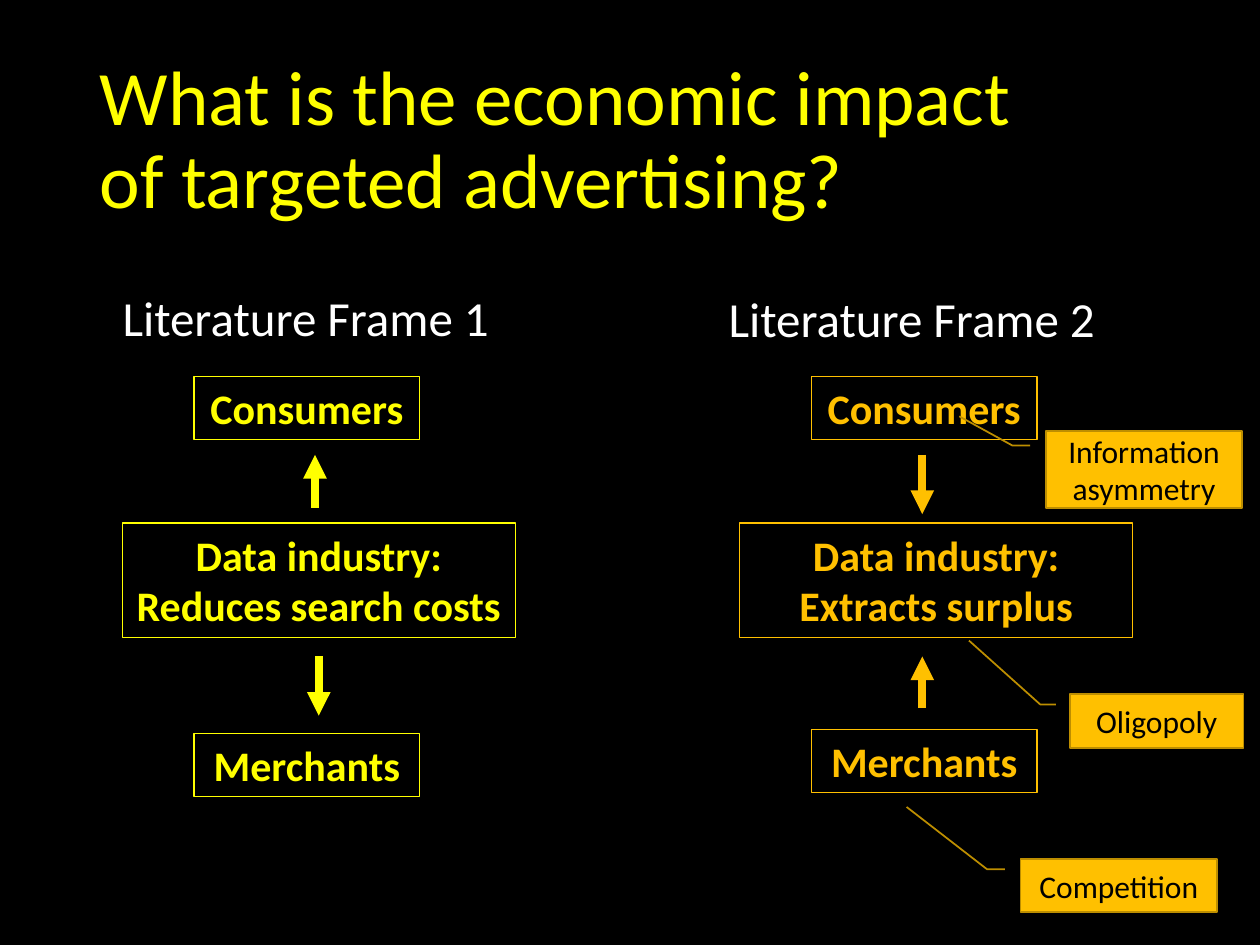
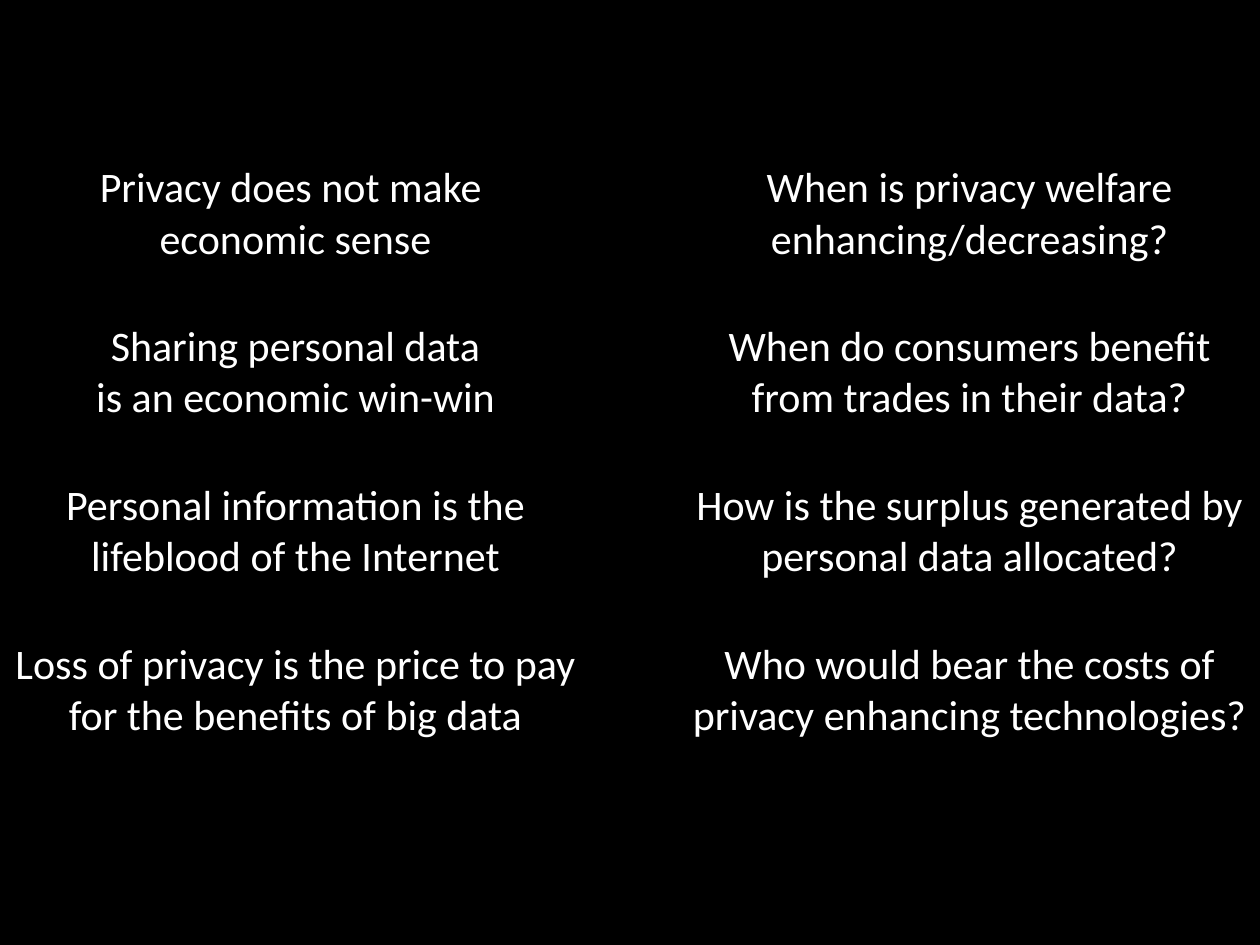
from dataclasses import dataclass

from lxml import etree
from pptx import Presentation
from pptx.dml.color import RGBColor
from pptx.enum import shapes, text
from pptx.oxml.ns import qn
from pptx.util import Inches, Pt


@dataclass(frozen=True)
class Theme:
    font: str = "Calibri"
    back: RGBColor = RGBColor(0, 0, 0)
    white: RGBColor = RGBColor(255, 255, 255)
    yellow: RGBColor = RGBColor(255, 255, 0)
    amber: RGBColor = RGBColor(255, 192, 0)
    amber_dark: RGBColor = RGBColor(0xBD, 0x8E, 0)
    title: Pt = Pt(44)
    heading: Pt = Pt(28)
    body: Pt = Pt(24)
    callout: Pt = Pt(18)


th = Theme()
NO_STYLE = "{2D5ABB26-0587-4C30-8999-92F81FD0307C}"  # table style without fill or grid


def write(tf, words, size, color, bold=False, para=None, **frame):
    """Fill a text frame: \\n starts a paragraph, \\v breaks a line."""
    for name, value in frame.items():
        setattr(tf, name, value)
    tf.text = words
    for p in tf.paragraphs:
        for name, value in {"alignment": text.PP_ALIGN.CENTER, **(para or {})}.items():
            setattr(p, name, value)
        for r in p.runs:
            for name, value in {"name": th.font, "size": size, "bold": bold}.items():
                setattr(r.font, name, value)
            r.font.color.rgb = color


def add_box(s, kind, at, line, width, fill=None):
    """Add a flat preset shape with an outline and an optional fill."""
    sp = s.shapes.add_shape(kind, *map(Inches, at))
    sp.shadow.inherit = False
    sp.line.color.rgb = line
    sp.line.width = Pt(width)
    if fill is None:
        sp.fill.background()
    else:
        sp.fill.solid()
        sp.fill.fore_color.rgb = fill
    return sp


prs = Presentation()
prs.slide_width, prs.slide_height = Inches(10), Inches(7.5)
frames_slide = prs.slides.add_slide(prs.slide_layouts[5])
claims_slide = prs.slides.add_slide(prs.slide_layouts[6])
for s in prs.slides:
    s.background.fill.solid()
    s.background.fill.fore_color.rgb = th.back

# Slide 1: title
s = frames_slide
sp = s.shapes.title
sp.left, sp.top, sp.width, sp.height = map(Inches, (0.69, 0.4, 8.62, 1.45))
write(sp.text_frame, "What is the economic impact \vof targeted advertising?",
      th.title, th.yellow, vertical_anchor=text.MSO_ANCHOR.MIDDLE, word_wrap=True,
      para={"alignment": text.PP_ALIGN.LEFT, "line_spacing": 0.9})

# Two frames: heading, three boxes and two arrows (x, from y, to y)
frames = [
    ("Literature Frame 1 ", 0.37, 2.0, 0.97, th.yellow, "Reduces search costs", 5.82,
     [(2.5, 4.03, 3.61), (2.53, 5.21, 5.68)]),
    ("Literature Frame 2 ", 5.18, 2.01, 5.87, th.amber, "Extracts surplus", 5.79,
     [(7.32, 3.61, 4.08), (7.32, 5.62, 5.21)]),
]
for heading, head_x, head_y, x, color, effect, merchants_y, arrows in frames:
    sp = s.shapes.add_textbox(*map(Inches, (head_x, head_y, 4.2, 5.11)))
    write(sp.text_frame, heading, th.heading, th.white, word_wrap=True,
          para={"line_spacing": 1.5, "space_before": Pt(5.6)})

    for words, dx, y, w, h in [("Consumers", 0.57, 2.99, 1.79, 0.5),
                               ("Merchants", 0.57, merchants_y, 1.79, 0.5),
                               ("Data industry:\n" + effect, 0, 4.15, 3.12, 0.91)]:
        sp = add_box(s, shapes.MSO_SHAPE.RECTANGLE, (x + dx, y, w, h), color, 0.75)
        write(sp.text_frame, words, th.body, color, bold=True, word_wrap=True,
              vertical_anchor=text.MSO_ANCHOR.TOP,
              auto_size=text.MSO_AUTO_SIZE.SHAPE_TO_FIT_TEXT)

    for arrow_x, y1, y2 in arrows:
        cx = s.shapes.add_connector(shapes.MSO_CONNECTOR.STRAIGHT,
                                    *map(Inches, (arrow_x, y1, arrow_x, y2)))
        cx.line.color.rgb = color
        cx.line.width = Pt(4.5)
        etree.SubElement(cx.line._get_or_add_ln(), qn("a:tailEnd"), type="triangle")
        etree.SubElement(cx._element.spPr, qn("a:effectLst"))

# Callouts with the end of their leader line (y, x)
for words, at, leader_end in [
    ("Competition", (8.1, 6.82, 1.56, 0.42), (-0.99, -0.58)),
    ("Oligopoly", (8.49, 5.51, 1.38, 0.43), (-0.99, -0.58)),
    ("Information asymmetry", (8.3, 3.42, 1.56, 0.61), (-0.19, -0.44)),
]:
    sp = add_box(s, shapes.MSO_SHAPE.LINE_CALLOUT_2, at, th.amber_dark, 1, th.amber)
    for i, value in enumerate((0.19, -0.08, 0.19, -0.17, *leader_end)):
        sp.adjustments[i] = value
    write(sp.text_frame, words, th.callout, th.back, word_wrap=True,
          vertical_anchor=text.MSO_ANCHOR.MIDDLE)

# Slide 2: claims on the left, questions on the right
claims = [
    ("Privacy does not make \veconomic sense",
     "When is privacy welfare enhancing/decreasing?"),
    ("Sharing personal data\vis an economic win-win",
     "When do consumers benefit from trades in their data?"),
    ("Personal information is the lifeblood of the Internet",
     "How is the surplus generated by personal data allocated?"),
    ("Loss of privacy is the price to pay for the benefits of big data",
     "Who would bear the costs of privacy enhancing technologies?"),
]
gf = claims_slide.shapes.add_table(len(claims), 3, *map(Inches, (0, 1.07, 10, 5.04)))
tb = gf.table
tb.first_row = tb.horz_banding = False
next(gf._element.iter(qn("a:tableStyleId"))).text = NO_STYLE
for col, width in zip(tb.columns, (4.69, 0.7, 4.61)):
    col.width = Inches(width)
for row, (claim, question) in zip(tb.rows, claims):
    row.height = Inches(1.26)
    for cell, words in zip(row.cells, (claim, "", question)):
        cell.fill.background()
        cell.vertical_anchor = text.MSO_ANCHOR.MIDDLE
        if words:
            write(cell.text_frame, words, th.body, th.white)

prs.save("out.pptx")
